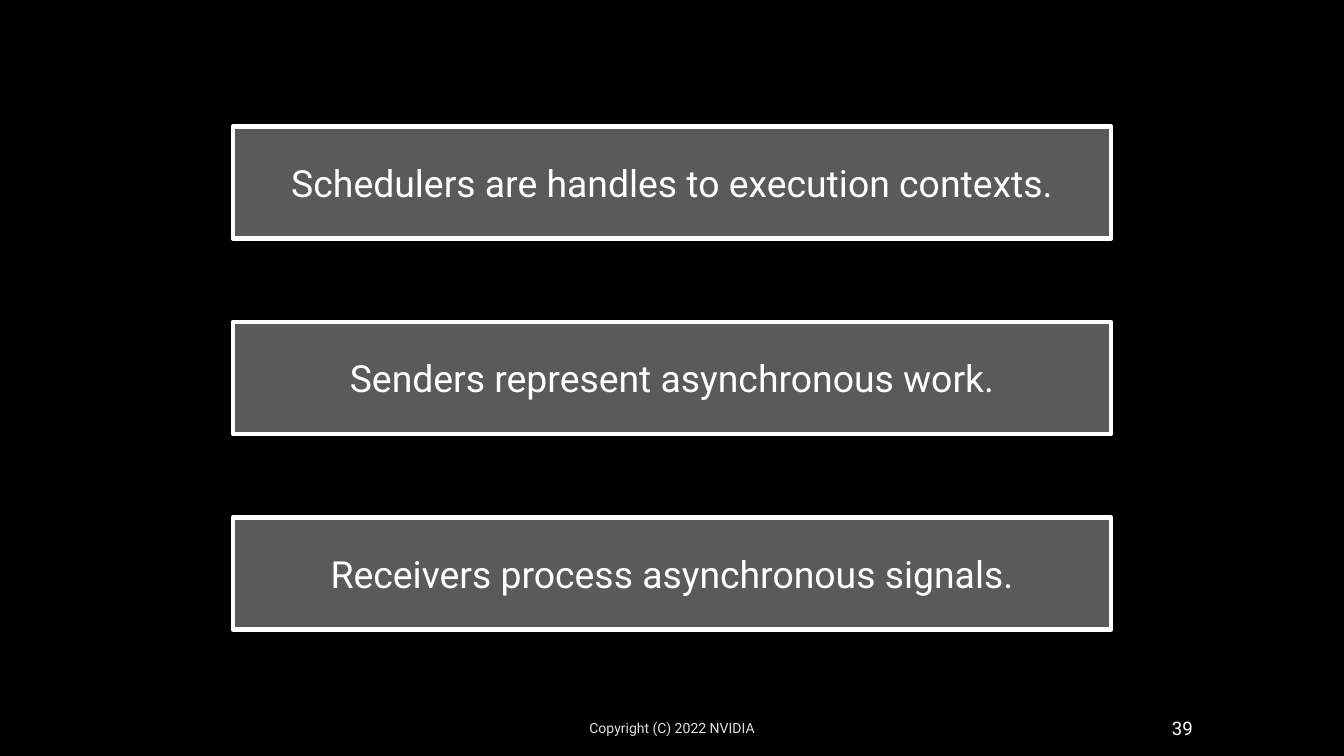
from pptx import Presentation
from pptx.dml.color import RGBColor
from pptx.enum.shapes import MSO_SHAPE
from pptx.enum.text import MSO_ANCHOR, PP_ALIGN
from pptx.util import Inches, Pt

RECT = MSO_SHAPE.RECTANGLE
MIDDLE = MSO_ANCHOR.MIDDLE
CENTER, RIGHT = PP_ALIGN.CENTER, PP_ALIGN.RIGHT

COLORS = {"back": "000000", "box": "5A5A5A", "white": "FFFFFF", "foot": "E1E1E1"}


def color(name):
    return RGBColor.from_string(COLORS[name])


def write(shape, text, size, tint, align):
    frame = shape.text_frame
    frame.word_wrap = True
    frame.vertical_anchor = MIDDLE
    para = frame.paragraphs[0]
    para.alignment = align
    run = para.add_run()
    run.text = text
    run.font.name = "Roboto"
    run.font.size = Pt(size)
    run.font.color.rgb = color(tint)


deck = Presentation()
deck.slide_width = Inches(12)
deck.slide_height = Inches(6.75)
slide = deck.slides.add_slide(deck.slide_layouts[6])
slide.background.fill.solid()
slide.background.fill.fore_color.rgb = color("back")

# Footer: page number and copyright
footer = [
    (8.49, 2.26, "39", 12, "white", RIGHT),
    (3.96, 4.08, "Copyright (C) 2022 NVIDIA", 9, "foot", CENTER),
]
for left, width, text, size, tint, align in footer:
    box = slide.shapes.add_textbox(
        Inches(left), Inches(6.32), Inches(width), Inches(0.36))
    write(box, text, size, tint, align)

# Three evenly spaced statements
claims = [
    "Schedulers are handles to execution contexts.",
    "Senders represent asynchronous work.",
    "Receivers process asynchronous signals.",
]
TOP, STEP = 1.13, 1.745
group = slide.shapes.add_group_shape()
for row, claim in enumerate(claims):
    box = group.shapes.add_shape(
        RECT, Inches(2.08), Inches(TOP + row * STEP), Inches(7.84), Inches(1))
    box.shadow.inherit = False
    box.fill.solid()
    box.fill.fore_color.rgb = color("box")
    box.line.color.rgb = color("white")
    box.line.width = Pt(3)
    write(box, claim, 24, "white", CENTER)

deck.save("out.pptx")
